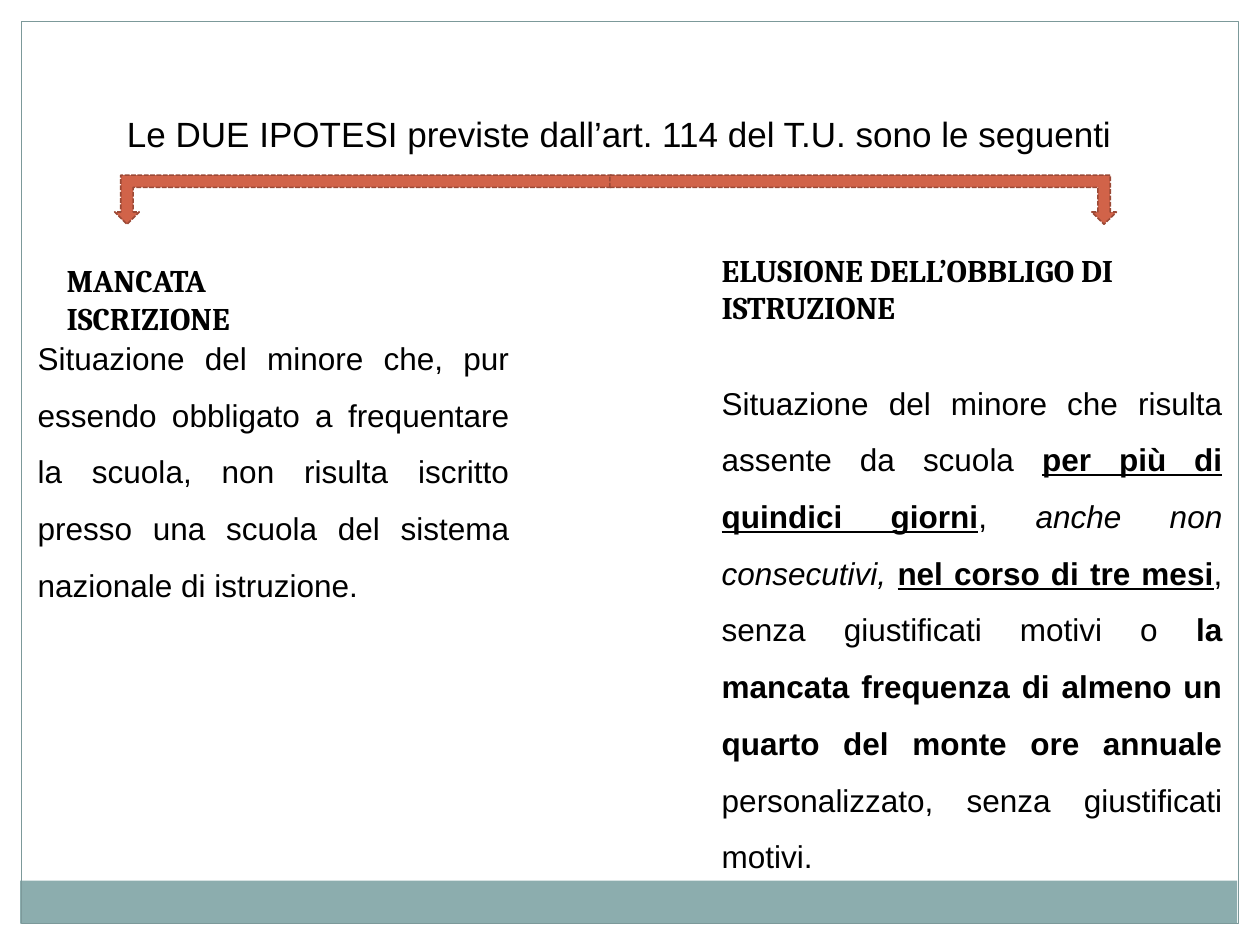
from pptx import Presentation
from pptx.dml.color import RGBColor
from pptx.enum.dml import MSO_LINE
from pptx.enum.shapes import MSO_SHAPE
from pptx.enum.text import MSO_AUTO_SIZE, PP_ALIGN
from pptx.util import Inches, Pt

BLACK = RGBColor(0x00, 0x00, 0x00)
TEAL = RGBColor(0x8C, 0xAD, 0xAE)
FRAME_GREY = RGBColor(0x7C, 0x99, 0x9A)
RUST = RGBColor(0xD1, 0x63, 0x49)
DARK_RUST = RGBColor(0x9B, 0x49, 0x36)


def add_shape(page, kind, area, fill=None, line=None, width=0.75):
    """Add a preset shape without shadow, with an optional fill and line."""
    shape = page.shapes.add_shape(kind, *map(Inches, area))
    shape.shadow.inherit = False
    if fill is None:
        shape.fill.background()
    else:
        shape.fill.solid()
        shape.fill.fore_color.rgb = fill
    if line is None:
        shape.line.fill.background()
    else:
        shape.line.color.rgb = line
        shape.line.width = Pt(width)
    return shape


def add_arrow(page, area, mirrored=False):
    """Add a bent arrow that points down at its outer end."""
    arrow = add_shape(page, MSO_SHAPE.BENT_UP_ARROW, area, RUST, DARK_RUST, 0.9)
    arrow.line.dash_style = MSO_LINE.SQUARE_DOT
    arrow.rotation = 180
    if mirrored:
        arrow._element.spPr.xfrm.set("flipH", "1")


def add_box(page, area):
    """Add a wrapping text box and return its text frame."""
    frame = page.shapes.add_textbox(*map(Inches, area)).text_frame
    frame.word_wrap = True
    frame.auto_size = MSO_AUTO_SIZE.SHAPE_TO_FIT_TEXT
    return frame


def add_span(para, text, style="", font="Arial", size=18):
    """Add a run; style holds any of the letters b, i and u."""
    span = para.add_run()
    span.text = text
    span.font.name = font
    span.font.size = Pt(size)
    span.font.color.rgb = BLACK
    span.font.bold = "b" in style
    span.font.italic = "i" in style
    span.font.underline = "u" in style


def add_heading(para, text):
    """Write a bold column heading."""
    add_span(para, text, "b", "Cambria")


def add_body(para, spans):
    """Write a justified, widely spaced paragraph from styled spans."""
    para.alignment = PP_ALIGN.JUSTIFY
    para.line_spacing = 1.5
    for text, style in spans:
        add_span(para, text, style)


def main():
    """Build the slide and save it."""
    deck = Presentation()
    deck.slide_width, deck.slide_height = Inches(10), Inches(7.5)
    page = deck.slides.add_slide(deck.slide_layouts[6])

    add_shape(page, MSO_SHAPE.RECTANGLE, (0.16, 6.99, 9.66, 0.34), TEAL)
    add_shape(page, MSO_SHAPE.RECTANGLE, (0.17, 0.17, 9.66, 7.16), line=FRAME_GREY)

    title = add_box(page, (0.91, 0.84, 8.56, 0.44))
    add_span(title.paragraphs[0],
             "Le DUE IPOTESI previste dall’art. 114 del T.U. sono le seguenti", size=20)
    add_arrow(page, (0.91, 1.39, 3.94, 0.39))
    add_arrow(page, (4.84, 1.39, 4.02, 0.39), mirrored=True)

    add_heading(add_box(page, (0.43, 2.02, 2.5, 0.71)).paragraphs[0], "MANCATA ISCRIZIONE")
    add_body(add_box(page, (0.2, 2.49, 3.94, 2.37)).paragraphs[0], [
        ("Situazione del minore che, pur essendo obbligato a frequentare la scuola, "
         "non risulta iscritto presso una scuola del sistema nazionale di istruzione.", ""),
    ])

    evasion = add_box(page, (5.63, 1.94, 4.17, 5.1))
    add_heading(evasion.paragraphs[0], "ELUSIONE DELL’OBBLIGO DI ISTRUZIONE")
    body = evasion.add_paragraph()
    body.space_before = Pt(22)
    add_body(body, [
        ("Situazione del minore che risulta assente da scuola ", ""),
        ("per più di quindici giorni", "bu"),
        (", ", ""),
        ("anche non consecutivi, ", "i"),
        ("nel corso di tre mesi", "bu"),
        (", senza giustificati motivi o ", ""),
        ("la mancata frequenza di almeno un quarto del monte ore annuale ", "b"),
        ("personalizzato, senza giustificati motivi.", ""),
    ])
    deck.save("out.pptx")


if __name__ == "__main__":
    main()
